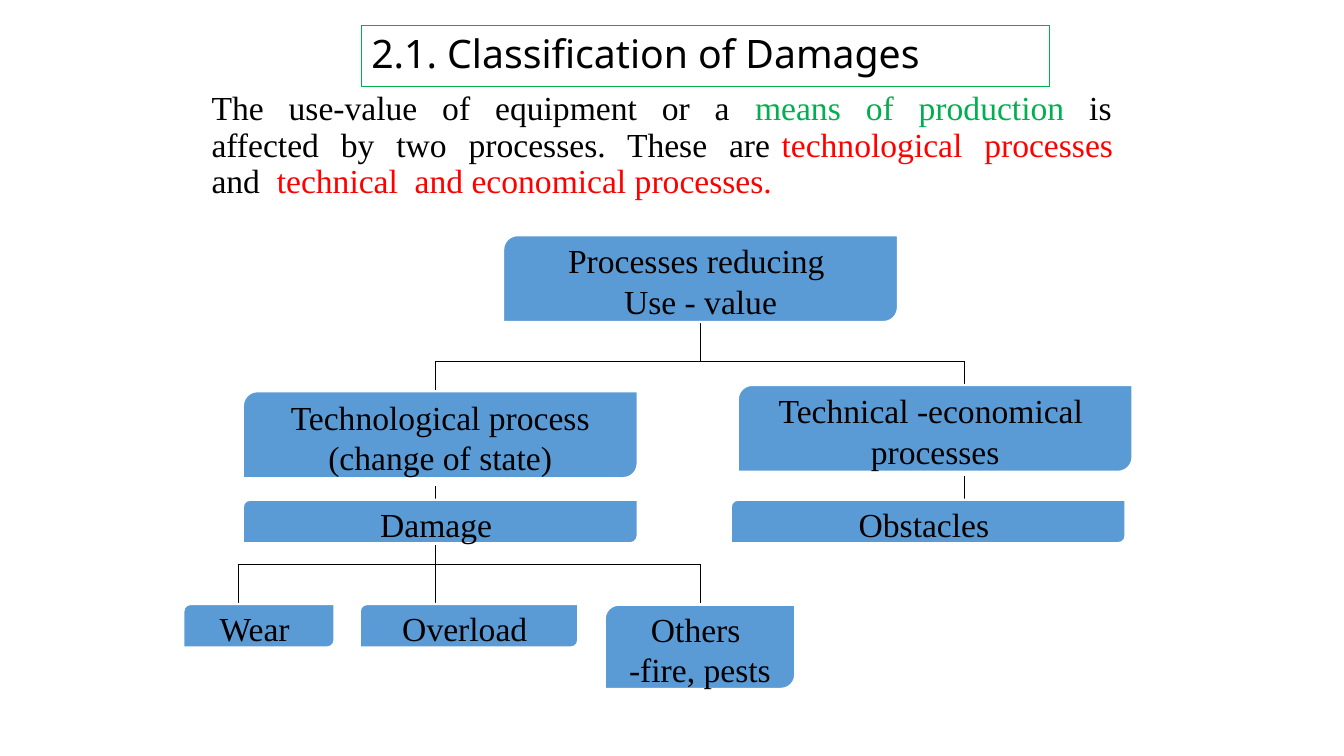
from dataclasses import dataclass

from lxml import etree
from pptx import Presentation
from pptx.dml.color import RGBColor
from pptx.enum.shapes import MSO_CONNECTOR, MSO_SHAPE
from pptx.enum.text import MSO_ANCHOR, MSO_AUTO_SIZE, PP_ALIGN
from pptx.oxml.ns import qn
from pptx.util import Pt

STRAIGHT = MSO_CONNECTOR.STRAIGHT
CARD = MSO_SHAPE.ROUND_2_DIAG_RECTANGLE
MIDDLE = MSO_ANCHOR.MIDDLE
LEFT, CENTER, JUSTIFY = PP_ALIGN.LEFT, PP_ALIGN.CENTER, PP_ALIGN.JUSTIFY


@dataclass(frozen=True)
class Theme:
    black: RGBColor = RGBColor(0, 0, 0)
    white: RGBColor = RGBColor(255, 255, 255)
    blue: RGBColor = RGBColor(0x5B, 0x9B, 0xD5)
    green: RGBColor = RGBColor(0x00, 0xB0, 0x50)
    red: RGBColor = RGBColor(255, 0, 0)
    title_font: str = "Noto Sans"
    body_font: str = "Times New Roman"
    title_size: int = 28
    body_size: int = 24


theme = Theme()


def style(font, name, size, color):
    font.name = name
    font.size = Pt(size)
    font.color.rgb = color


deck = Presentation()
deck.slide_width, deck.slide_height = Pt(960), Pt(540)
page = deck.slides.add_slide(deck.slide_layouts[5])

# Title
title = page.shapes.title
title.left, title.top, title.width, title.height = Pt(258), Pt(18), Pt(492), Pt(44)
title.line.color.rgb = theme.green
title.line.width = Pt(0.75)
title.text_frame.text = "2.1. Classification of Damages"
title.text_frame.auto_size = MSO_AUTO_SIZE.NONE
title.text_frame.vertical_anchor = MIDDLE
heading = title.text_frame.paragraphs[0]
heading.alignment = LEFT
heading.line_spacing = 0.9
style(heading.runs[0].font, theme.title_font, theme.title_size, theme.black)

# Introduction
intro = page.shapes.add_textbox(Pt(144), Pt(62), Pt(666), Pt(496 - 18))
intro.text_frame.word_wrap = True
para = intro.text_frame.paragraphs[0]
para.alignment = JUSTIFY
para.line_spacing = 0.9
for words, color in [
    ("The  use-value  of  equipment  or  a  ", theme.black),
    ("means  of  production", theme.green),
    ("  is  affected  by  two  processes.  These  are ", theme.black),
    ("technological  processes  ", theme.red),
    ("and  ", theme.black),
    ("technical  and economical processes.", theme.red),
]:
    span = para.add_run()
    span.text = words
    style(span.font, theme.body_font, theme.body_size, color)

# Branches of the tree
root_x, left_x, right_x = 500.4, 311, 689
wear_x, others_x = 170, 500
upper_y, lower_y = 258, 403

for x1, y1, x2, y2 in [
    (root_x, 230, root_x, upper_y),
    (left_x, upper_y, right_x, upper_y),
    (left_x, upper_y, left_x, 279.5),
    (right_x, upper_y, right_x, 275),
    (left_x, 347, left_x, 357),
    (right_x, 340, right_x, 357),
    (left_x, 389.5, left_x, lower_y),
    (wear_x, lower_y, others_x, lower_y),
    (wear_x, lower_y, wear_x, 431),
    (left_x, lower_y, left_x, 431),
    (others_x, lower_y, others_x, 431),
]:
    branch = page.shapes.add_connector(STRAIGHT, Pt(x1), Pt(y1), Pt(x2), Pt(y2))
    branch.line.color.rgb = theme.black
    branch.line.width = Pt(0.5)
    etree.SubElement(branch._element.spPr, qn("a:effectLst"))

# Cards of the tree
wide, tall, low = 282, 62, 31
for words, left, top, width, height in [
    ("Processes reducing \nUse - value", 359.4, 168, wide, tall),
    ("Technological process\n(change of state)", 173.5, 279.5, wide, tall),
    ("Technical -economical \nprocesses", 527, 275, wide, tall),
    ("Damage ", 173.5, 357, wide, low),
    ("Obstacles ", 522, 357, wide, low),
    ("Wear ", 131, 431.5, 108, low),
    ("Overload ", 257, 431.5, 156, low),
    ("Others \n-fire, pests", 432, 432, 136, 60),
]:
    card = page.shapes.add_shape(CARD, Pt(left), Pt(top), Pt(width), Pt(height))
    card.shadow.inherit = False
    card.fill.solid()
    card.fill.fore_color.rgb = theme.blue
    card.line.color.rgb = theme.white
    card.line.width = Pt(1.5)
    frame = card.text_frame
    frame.word_wrap = True
    frame.vertical_anchor = MIDDLE
    frame.margin_top, frame.margin_bottom = Pt(3), Pt(0)
    frame.text = words
    for para in frame.paragraphs:
        para.alignment = CENTER
        style(para.runs[0].font, theme.body_font, theme.body_size, theme.black)

deck.save("out.pptx")
